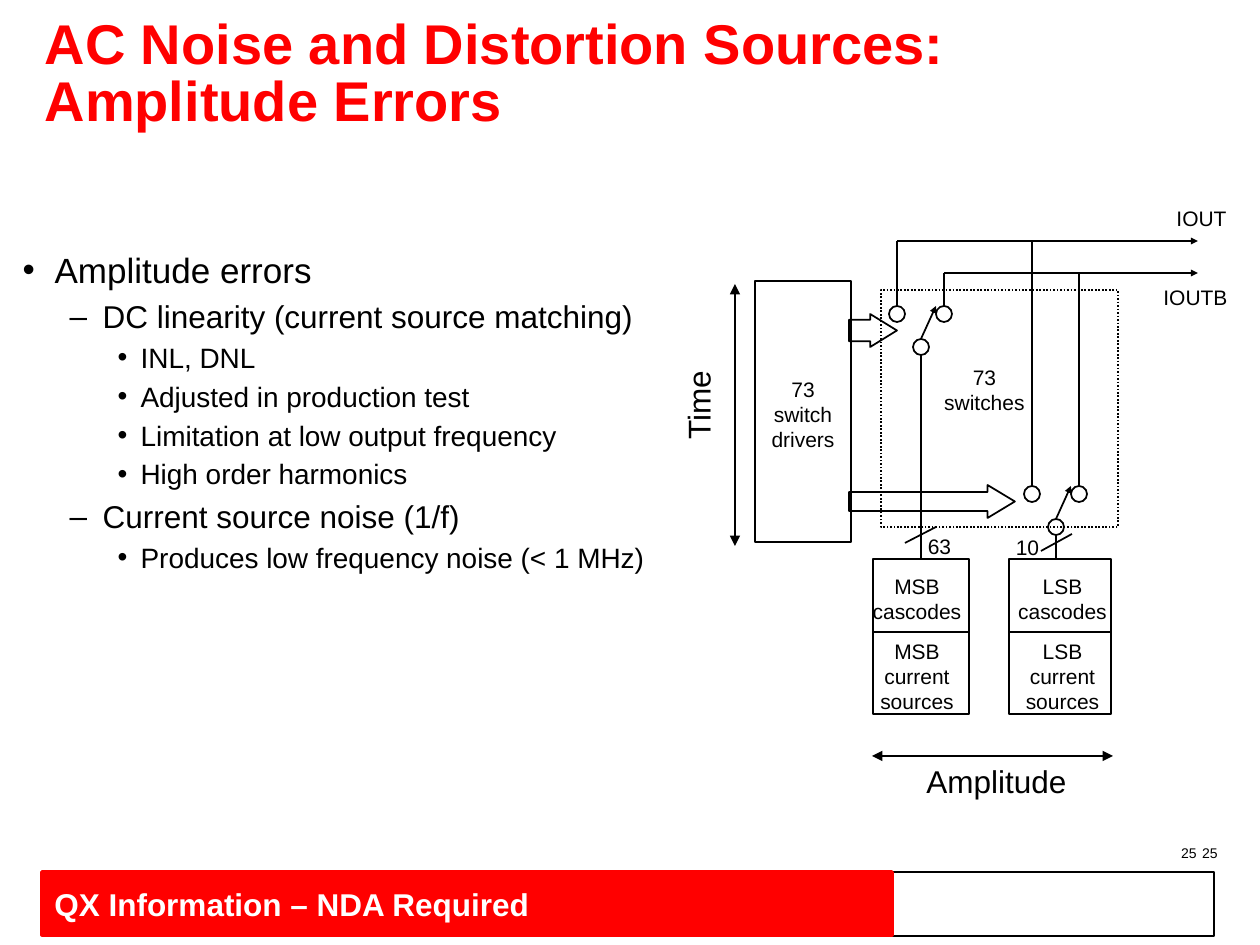
from lxml import etree
from pptx import Presentation
from pptx.dml.color import RGBColor
from pptx.enum.dml import MSO_LINE
from pptx.enum.shapes import MSO_CONNECTOR, MSO_SHAPE
from pptx.enum.text import MSO_ANCHOR, MSO_AUTO_SIZE, PP_ALIGN
from pptx.oxml.ns import qn
from pptx.util import Emu, Pt

EMU_PER_PX = 914400 // 126
RECTANGLE, OVAL, ARROW = MSO_SHAPE.RECTANGLE, MSO_SHAPE.OVAL, MSO_SHAPE.RIGHT_ARROW
STRAIGHT = MSO_CONNECTOR.STRAIGHT
LEFT, CENTER, RIGHT = PP_ALIGN.LEFT, PP_ALIGN.CENTER, PP_ALIGN.RIGHT
MIDDLE, TOP = MSO_ANCHOR.MIDDLE, MSO_ANCHOR.TOP
NO_AUTOFIT = MSO_AUTO_SIZE.NONE
DOTTED = MSO_LINE.ROUND_DOT
FONT, BLACK, RED, WHITE = "Arial", "000000", "FF0000", "FFFFFF"

TITLE = ["AC Noise and Distortion Sources:", "Amplitude Errors"]
BULLETS = [
    (0, "Amplitude errors"),
    (1, "DC linearity (current source matching)"),
    (2, "INL, DNL"),
    (2, "Adjusted in production test"),
    (2, "Limitation at low output frequency"),
    (2, "High order harmonics"),
    (1, "Current source noise (1/f)"),
    (2, "Produces low frequency noise (< 1 MHz)"),
]
# Per level: bullet, text left in px, hanging indent in px, size, space before
LEVELS = [("•", 32, 32, 20, 0), ("–", 80, 33, 18, 4), ("•", 118, 23, 16, 3)]
FOOTER = "QX Information – NDA Required"

DRIVER_BOX = (755, 281, 96, 261)
SWITCH_BOX = (881, 290, 237, 237)
# Name, box left, box width, label left, label width
COLUMNS = [("MSB", 873, 96, 858, 118), ("LSB", 1009, 102, 1002, 121)]
# Row text, box top, box height, label top, label height
ROWS = [("cascodes", 559, 73, 567, 63), ("current sources", 632, 82, 632, 88)]
SWITCHES = [(889, 306), (1024, 486)]
CIRCLE = 16
CONTACT_GAP = 47
POLE_OFFSET = (24, 33)
OUTPUT_LEVELS = (241, 273)
OUTPUT_END = 1198
DRIVE_ARROWS = [((849, 485, 166, 33), (0.57, 0.83)), ((849, 314, 48, 33), (0.65, 0.81))]
BUS_SLASHES = [(905, 543, 936, 527), (1041, 551, 1072, 534)]
DIMENSIONS = [(872, 756, 1113, 756), (735, 546, 735, 284)]
# Text, box, alignment, size
LABELS = [
    ("73 switch drivers", (755, 370, 96, 88), CENTER, 12),
    ("73 switches", (929, 358, 111, 63), CENTER, 12),
    ("63", (912, 527, 55, 38), CENTER, 12),
    ("10", (1000, 528, 55, 38), CENTER, 12),
    ("IOUT", (1143, 199, 96, 38), RIGHT, 12),
    ("IOUTB", (1144, 278, 96, 38), RIGHT, 12),
    ("25", (936, 838, 294, 29), RIGHT, 8),
    ("25", (915, 838, 294, 29), RIGHT, 8),
]
AXIS_NAMES = [("Amplitude", (914, 756, 174, 50), 0), ("Time", (650, 379, 96, 50), 270)]


def px(*lengths):
    return [Emu(length * EMU_PER_PX) for length in lengths]


def color(hex_text):
    return RGBColor.from_string(hex_text)


def add_run(paragraph, text, size, hex_color=BLACK, bold=False):
    run = paragraph.add_run()
    run.text = text
    run.font.name, run.font.size, run.font.bold = FONT, Pt(size), bold
    run.font.color.rgb = color(hex_color)


def add_outline(slide, kind, box, width=1, line=BLACK, fill=None):
    shape = slide.shapes.add_shape(kind, *px(*box))
    shape.shadow.inherit = False
    if fill:
        shape.fill.solid()
        shape.fill.fore_color.rgb = color(fill)
    else:
        shape.fill.background()
    shape.line.color.rgb = color(line)
    shape.line.width = Pt(width)
    return shape


def add_line(slide, points, width=1, ends=(), head_size="sm"):
    """Draw a line; ends holds 'headEnd' and/or 'tailEnd' for arrowheads."""
    line = slide.shapes.add_connector(STRAIGHT, *px(*points))
    line.line.color.rgb = color(BLACK)
    line.line.width = Pt(width)
    outline = line.line._get_or_add_ln()
    for end in ends:
        etree.SubElement(outline, qn(f"a:{end}"), type="triangle", w=head_size, len=head_size)
    etree.SubElement(line._element.spPr, qn("a:effectLst"))
    return line


def add_label(slide, text, box, align, size, wrap=True):
    label = slide.shapes.add_textbox(*px(*box))
    label.text_frame.word_wrap = wrap
    paragraph = label.text_frame.paragraphs[0]
    paragraph.alignment = align
    add_run(paragraph, text, size)
    return label


def place(placeholder, box, anchor):
    placeholder.left, placeholder.top, placeholder.width, placeholder.height = px(*box)
    frame = placeholder.text_frame
    frame.auto_size, frame.vertical_anchor, frame.word_wrap = NO_AUTOFIT, anchor, True
    return frame


def add_footer(slide):
    add_outline(slide, RECTANGLE, (47, 872, 1167, 64), 0.75)
    banner = add_outline(slide, RECTANGLE, (42, 872, 850, 63), 2, RED, RED)
    banner.text_frame.vertical_anchor = MIDDLE
    paragraph = banner.text_frame.paragraphs[0]
    paragraph.alignment = LEFT
    add_run(paragraph, FOOTER, 18, WHITE, True)


def fill_title(slide):
    paragraph = place(slide.shapes.title, (32, 20, 1166, 112), MIDDLE).paragraphs[0]
    paragraph.alignment = LEFT
    paragraph.line_spacing = 0.85
    for index, text in enumerate(TITLE):
        if index:
            paragraph.add_line_break()
        add_run(paragraph, text, 32, RED, True)


def fill_body(slide):
    frame = place(slide.placeholders[1], (10, 242, 693, 441), TOP)
    for index, (level, text) in enumerate(BULLETS):
        paragraph = frame.add_paragraph() if index else frame.paragraphs[0]
        bullet, left, hanging, size, space = LEVELS[level]
        paragraph.level = level
        properties = paragraph._p.get_or_add_pPr()
        properties.set("marL", str(px(left)[0]))
        properties.set("indent", str(-px(hanging)[0]))
        etree.SubElement(properties, qn("a:buFont"), typeface=FONT)
        etree.SubElement(properties, qn("a:buChar"), char=bullet)
        paragraph.space_before = Pt(space)
        add_run(paragraph, text, size)


def add_switch(slide, left, top, source):
    """Draw two contacts wired to the outputs and a pole wired to its source."""
    pole_x, pole_y = left + POLE_OFFSET[0], top + POLE_OFFSET[1]
    contacts = (left, left + CONTACT_GAP)
    for x, y in ((contacts[0], top), (contacts[1], top), (pole_x, pole_y)):
        add_outline(slide, OVAL, (x, y, CIRCLE, CIRCLE))
    half = CIRCLE // 2
    add_line(slide, (pole_x + half, pole_y, contacts[1], top), ends=["tailEnd"])
    for x, level in zip(contacts, OUTPUT_LEVELS):
        add_line(slide, (x + half, top, x + half, level))
    stem_x = pole_x + half
    stem = add_line(slide, (stem_x, pole_y + CIRCLE, stem_x, ROWS[0][1]))
    if abs(source.left + source.width // 2 - px(stem_x)[0]) <= EMU_PER_PX:
        stem.end_connect(source, 0)


def add_diagram(slide):
    add_outline(slide, RECTANGLE, DRIVER_BOX)
    add_outline(slide, RECTANGLE, SWITCH_BOX).line.dash_style = DOTTED
    for (name, left, width, label_left, label_width), origin in zip(COLUMNS, SWITCHES):
        boxes = []
        for text, top, height, label_top, label_height in ROWS:
            boxes.append(add_outline(slide, RECTANGLE, (left, top, width, height)))
            label_box = (label_left, label_top, label_width, label_height)
            add_label(slide, f"{name} {text}", label_box, CENTER, 12)
        add_switch(slide, *origin, boxes[0])
    for box, adjustments in DRIVE_ARROWS:
        arrow = add_outline(slide, ARROW, box)
        for index, value in enumerate(adjustments):
            arrow.adjustments[index] = value
    first_contact = SWITCHES[0][0] + CIRCLE // 2
    for index, level in enumerate(OUTPUT_LEVELS):
        start = first_contact + index * CONTACT_GAP
        add_line(slide, (start, level, OUTPUT_END, level), ends=["tailEnd"])
    for points in BUS_SLASHES:
        add_line(slide, points)
    for points in DIMENSIONS:
        add_line(slide, points, 0.75, ["headEnd", "tailEnd"], "med")
    for label in LABELS:
        add_label(slide, *label)
    for text, box, rotation in AXIS_NAMES:
        add_label(slide, text, box, LEFT, 18, wrap=False).rotation = rotation


def main():
    presentation = Presentation()
    presentation.slide_width, presentation.slide_height = px(1260, 945)
    slide = presentation.slides.add_slide(presentation.slide_layouts[1])
    add_footer(slide)
    fill_title(slide)
    fill_body(slide)
    add_diagram(slide)
    presentation.save("out.pptx")


if __name__ == "__main__":
    main()
